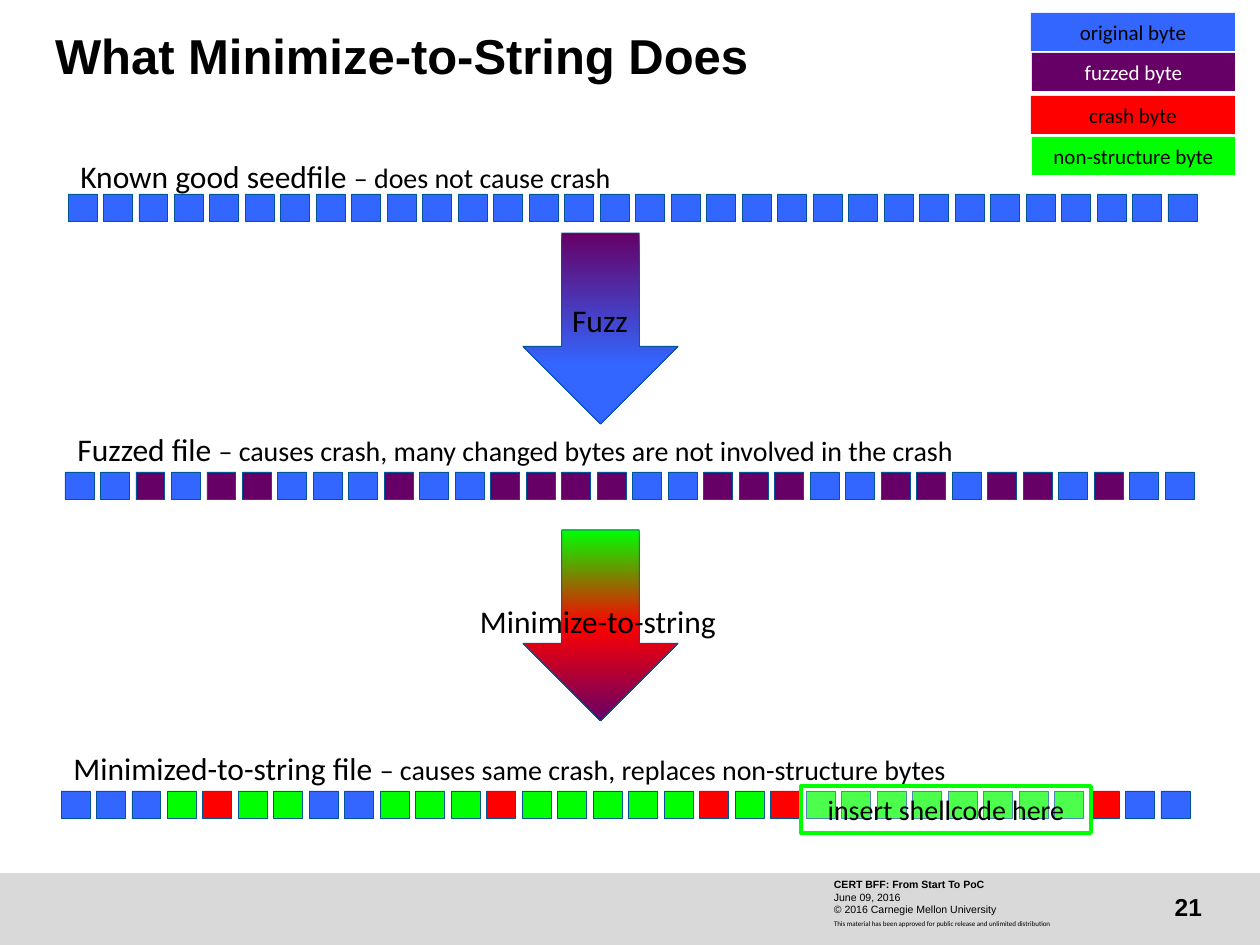
"""Build the slide that explains what minimize-to-string does to a seed file."""
from typing import NamedTuple, Optional

from lxml.etree import SubElement
from pptx import Presentation
from pptx.dml.color import RGBColor
from pptx.enum.shapes import MSO_SHAPE
from pptx.enum.text import MSO_ANCHOR, PP_ALIGN
from pptx.oxml.ns import qn
from pptx.util import Emu, Pt

EMU_PER_PX = 914400 / 126
BLACK, WHITE, GREY, OUTLINE = "000000", "FFFFFF", "D9D9D9", "005694"
ORIGINAL, FUZZED, CRASH, FREE = "3366FF", "660066", "FF0000", "00FF00"
BYTE_COLORS = {"o": ORIGINAL, "f": FUZZED, "c": CRASH, "n": FREE}
BYTE_WIDTH, BYTE_HEIGHT, ROW_SPAN = 29, 28, 1100


class Box(NamedTuple):
    """Left, top, width and height in px."""
    left: int
    top: int
    width: int
    height: int


class Run(NamedTuple):
    """A piece of text with its format."""
    text: str
    size: int
    name: str = "Calibri"
    bold: bool = False
    color: str = BLACK


class ByteRow(NamedTuple):
    """A file drawn as a captioned row of bytes."""
    left: int
    top: int
    caption_top: int
    caption_width: int
    heading: str
    detail: str
    kinds: str


class Step(NamedTuple):
    """A labelled arrow between two files."""
    arrow: Box
    label: Box
    text: str
    stops: tuple[tuple[int, str], ...]


class Legend(NamedTuple):
    """A key to one byte colour."""
    box: Box
    text: str
    fill: str
    color: str


ROWS = (
    ByteRow(68, 194, 151, 622, "Known good seedfile ", "– does not cause crash", "o" * 32),
    ByteRow(65, 472, 424, 1017, "Fuzzed file ",
            "– causes crash, many changed bytes are not involved in the crash",
            "oofoffooofooffffoofffooffoffofoo"),
    ByteRow(61, 791, 743, 992, "Minimized-to-string file ",
            "– causes same crash, replaces non-structure bytes",
            "oooncnnoonnncnnnnncncnnnnnnnncoo"),
)
STEPS = (
    Step(Box(523, 530, 155, 191), Box(460, 596, 276, 50), "Minimize-to-string",
         ((0, FREE), (50, CRASH), (100, FUZZED))),
    Step(Box(523, 233, 155, 191), Box(559, 295, 82, 50), "Fuzz",
         ((0, FUZZED), (69, ORIGINAL))),
)
LEGENDS = (
    Legend(Box(1031, 13, 204, 38), "original byte", ORIGINAL, BLACK),
    Legend(Box(1032, 53, 203, 38), "fuzzed byte", FUZZED, WHITE),
    Legend(Box(1031, 96, 204, 38), "crash byte", CRASH, BLACK),
    Legend(Box(1032, 137, 203, 38), "non-structure byte", FREE, BLACK),
)


def px(length: float) -> Emu:
    """Turn px into EMU."""
    return Emu(round(length * EMU_PER_PX))


def paint(color_format, color: str) -> None:
    """Set a colour from a hex string."""
    color_format.rgb = RGBColor.from_string(color)


def write(shape, paragraphs: list[list[Run]], inset: Optional[int] = None, wrap: bool = True,
          anchor=MSO_ANCHOR.TOP, **paragraph_format) -> None:
    """Fill a shape with formatted paragraphs."""
    frame = shape.text_frame
    frame_format = {"word_wrap": wrap, "vertical_anchor": anchor}
    if inset is not None:
        sides = ("left", "top", "right", "bottom")
        frame_format |= {f"margin_{side}": px(inset) for side in sides}
    for key, value in frame_format.items():
        setattr(frame, key, value)
    for index, runs in enumerate(paragraphs):
        paragraph = frame.add_paragraph() if index else frame.paragraphs[0]
        for key, value in paragraph_format.items():
            setattr(paragraph, key, value)
        for piece in runs:
            run = paragraph.add_run()
            run.text = piece.text
            font_format = {"size": Pt(piece.size), "name": piece.name, "bold": piece.bold}
            for key, value in font_format.items():
                setattr(run.font, key, value)
            paint(run.font.color, piece.color)


def add_text(slide, box: Box, paragraphs: list[list[Run]], **text_format) -> None:
    """Add a text box."""
    write(slide.shapes.add_textbox(*map(px, box)), paragraphs, **text_format)


def add_block(slide, box: Box, fill: Optional[str], line: Optional[str] = None,
              weight: float = 0.5, kind=MSO_SHAPE.RECTANGLE):
    """Add a preset shape without shadow."""
    block = slide.shapes.add_shape(kind, *map(px, box))
    block.shadow.inherit = False
    if fill:
        block.fill.solid()
        paint(block.fill.fore_color, fill)
    if line:
        paint(block.line.color, line)
        block.line.width = Pt(weight)
    else:
        block.line.fill.background()
    return block


def add_row(slide, row: ByteRow) -> None:
    """Draw the bytes of a file at an equal pitch."""
    pitch = ROW_SPAN / (len(row.kinds) - 1)
    for index, kind in enumerate(row.kinds):
        box = Box(row.left + index * pitch, row.top, BYTE_WIDTH, BYTE_HEIGHT)
        add_block(slide, box, BYTE_COLORS[kind], OUTLINE)


def add_step(slide, step: Step) -> None:
    """Draw an arrow with a downward gradient."""
    arrow = add_block(slide, step.arrow, None, OUTLINE, kind=MSO_SHAPE.DOWN_ARROW)
    arrow.fill.gradient()
    arrow.fill.gradient_angle = 270
    stop_list = arrow._element.spPr.find(qn("a:gradFill")).find(qn("a:gsLst"))
    for old_stop in list(stop_list):
        stop_list.remove(old_stop)
    for position, color in step.stops:
        stop = SubElement(stop_list, qn("a:gs"), pos=str(position * 1000))
        SubElement(stop, qn("a:srgbClr"), val=color)


def add_footer(slide) -> None:
    """Draw the footer band, its credits and the slide number."""
    add_block(slide, Box(0, 873, 1260, 72), GREY)
    add_text(slide, Box(1131, 882, 71, 50), [[Run("21", 14, "Arial", True)]], inset=0,
             anchor=MSO_ANCHOR.MIDDLE, alignment=PP_ALIGN.RIGHT)
    credits = [[Run("CERT BFF: From Start To PoC", 6, "Arial", True)],
               [Run("June 09, 2016", 6, "Arial")],
               [Run("© 2016 Carnegie Mellon University", 6, "Arial")]]
    add_text(slide, Box(834, 878, 289, 38), credits, inset=0)
    release = "This material has been approved for public release and unlimited distribution"
    add_text(slide, Box(834, 919, 289, 9), [[Run(release, 4)]], inset=0)


def main() -> None:
    """Build and save the slide."""
    deck = Presentation()
    deck.slide_width, deck.slide_height = px(1260), px(945)
    slide = deck.slides.add_slide(deck.slide_layouts[5])
    add_footer(slide)
    title = slide.shapes.title
    title.left, title.top, title.width, title.height = map(px, Box(55, 32, 1047, 92))
    write(title, [[Run("What Minimize-to-String Does", 28, "Arial", True)]], inset=0,
          alignment=PP_ALIGN.LEFT, line_spacing=0.9)
    for row in ROWS:
        add_row(slide, row)
    for row in ROWS:
        add_text(slide, Box(row.left, row.caption_top, row.caption_width, 50),
                 [[Run(row.heading, 18), Run(row.detail, 16)]], wrap=False)
    for step in STEPS:
        add_step(slide, step)
    for step in STEPS:
        add_text(slide, step.label, [[Run(step.text, 18)]], wrap=False,
                 alignment=PP_ALIGN.CENTER)
    shellcode = add_block(slide, Box(801, 786, 290, 47), WHITE, FREE, 2.25)
    veil = shellcode._element.spPr.find(qn("a:solidFill")).find(qn("a:srgbClr"))
    SubElement(veil, qn("a:alpha"), val="30000")
    write(shellcode, [[Run("insert shellcode here", 16)]], alignment=PP_ALIGN.CENTER)
    for legend in LEGENDS:
        key = add_block(slide, legend.box, legend.fill)
        write(key, [[Run(legend.text, 12, color=legend.color)]],
              anchor=MSO_ANCHOR.MIDDLE, alignment=PP_ALIGN.CENTER)
    deck.save("out.pptx")


if __name__ == "__main__":
    main()
